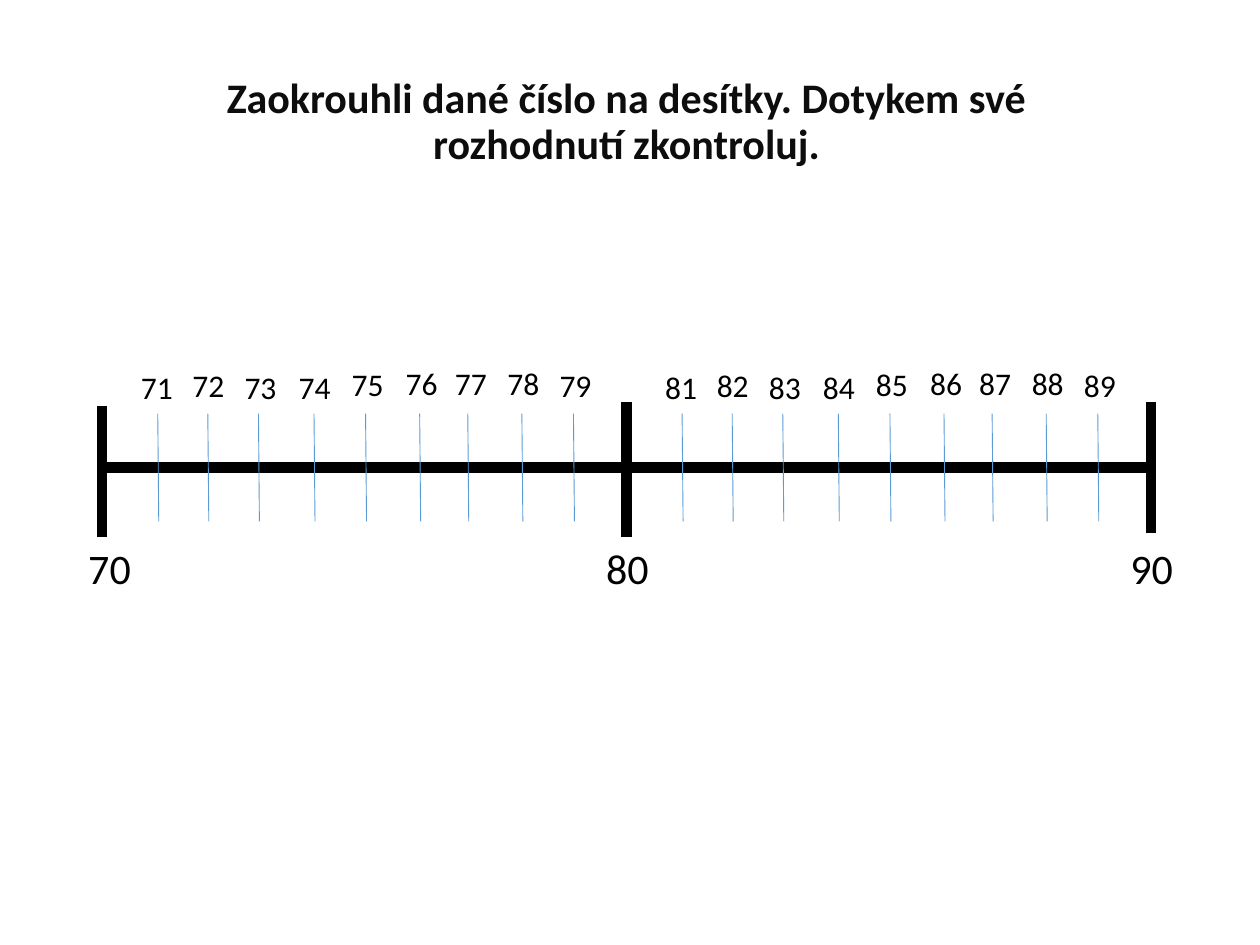
from pptx import Presentation
from pptx.dml.color import RGBColor
from pptx.enum.shapes import MSO_CONNECTOR
from pptx.enum.text import MSO_ANCHOR, MSO_AUTO_SIZE, PP_ALIGN
from pptx.oxml.ns import qn
from pptx.util import Cm, Pt
from lxml.etree import SubElement

BLACK = RGBColor(0x00, 0x00, 0x00)
TITLE_COLOR = RGBColor(0x0D, 0x0D, 0x0D)
TICK_BLUE = RGBColor(0x5B, 0x9B, 0xD5)
FONT = "Calibri"
DECADE_WIDTH = 10.57
TICK_OFFSETS = [1.12, 2.13, 3.15, 4.27, 5.31, 6.4, 7.37, 8.46, 9.5]
LABEL_OFFSETS = [
    (0.53, 0.08), (1.57, 0.05), (2.62, 0.08), (3.71, 0.08), (4.78, 0.03),
    (5.87, 0), (6.86, 0), (7.92, 0), (8.97, 0.05),
]


def format_paragraph(paragraph, size, color, bold=False):
    """Set the font of a whole paragraph."""
    font = paragraph.font
    font.name = FONT
    font.size = Pt(size)
    font.bold = bold
    font.color.rgb = color


def add_line(slide, start, end, color, width):
    """Draw a straight line without a shadow."""
    line = slide.shapes.add_connector(
        MSO_CONNECTOR.STRAIGHT, *(Cm(value) for value in (*start, *end)))
    line.line.color.rgb = color
    line.line.width = Pt(width)
    SubElement(line._element.spPr, qn("a:effectLst"))


def add_number(slide, left, top, width, height, number, size):
    """Write a number on the line."""
    box = slide.shapes.add_textbox(Cm(left), Cm(top), Cm(width), Cm(height))
    frame = box.text_frame
    frame.word_wrap = True
    frame.auto_size = MSO_AUTO_SIZE.SHAPE_TO_FIT_TEXT
    paragraph = frame.paragraphs[0]
    paragraph.text = str(number)
    format_paragraph(paragraph, size, BLACK)


def add_title(slide, left, top, width, height):
    """Place and format the task in the title placeholder."""
    title = slide.shapes.title
    title.left, title.top = Cm(left), Cm(top)
    title.width, title.height = Cm(width), Cm(height)
    frame = title.text_frame
    frame.text = "Zaokrouhli dané číslo na desítky. Dotykem své rozhodnutí zkontroluj."
    frame.word_wrap = True
    frame.auto_size = MSO_AUTO_SIZE.NONE
    frame.vertical_anchor = MSO_ANCHOR.MIDDLE
    paragraph = frame.paragraphs[0]
    paragraph.alignment = PP_ALIGN.CENTER
    paragraph.line_spacing = 0.9
    format_paragraph(paragraph, 24, TITLE_COLOR, bold=True)


def add_decade(slide, left, top, width, first):
    """Draw ten steps of the number line with bars, ticks and numbers."""
    axis = top + 2.21
    right = left + width
    add_line(slide, (left, axis), (right - 0.05, axis), BLACK, 6)
    for x, y in ((left, top + 0.97), (right, top + 0.89)):
        add_line(slide, (x, y), (x, y + 2.64), BLACK, 6)
    for x in TICK_OFFSETS:
        add_line(slide, (left + x, top + 1.13), (left + x + 0.02, top + 3.3), TICK_BLUE, 0.5)
    for number, (x, y) in enumerate(LABEL_OFFSETS, first + 1):
        add_number(slide, left + x, top + y, 1.4, 1.02, number, 18)
    add_number(slide, right - 0.66, top + 3.61, 1.37, 1.27, first + 10, 24)


def add_number_line(slide, left, top, first, decades):
    """Join decades into one number line."""
    add_number(slide, left - 0.53, top + 3.61, 1.37, 1.27, first, 24)
    for index in range(decades):
        add_decade(slide, left + index * DECADE_WIDTH, top, DECADE_WIDTH, first + 10 * index)


def main():
    """Build and save the presentation."""
    presentation = Presentation()
    presentation.slide_width, presentation.slide_height = Cm(25.4), Cm(19.05)
    slide = presentation.slides.add_slide(presentation.slide_layouts[5])
    add_title(slide, 2.57, 0.89, 20.12, 3.18)
    add_number_line(slide, 2.06, 7.21, 70, 2)
    presentation.save("out.pptx")


if __name__ == "__main__":
    main()
